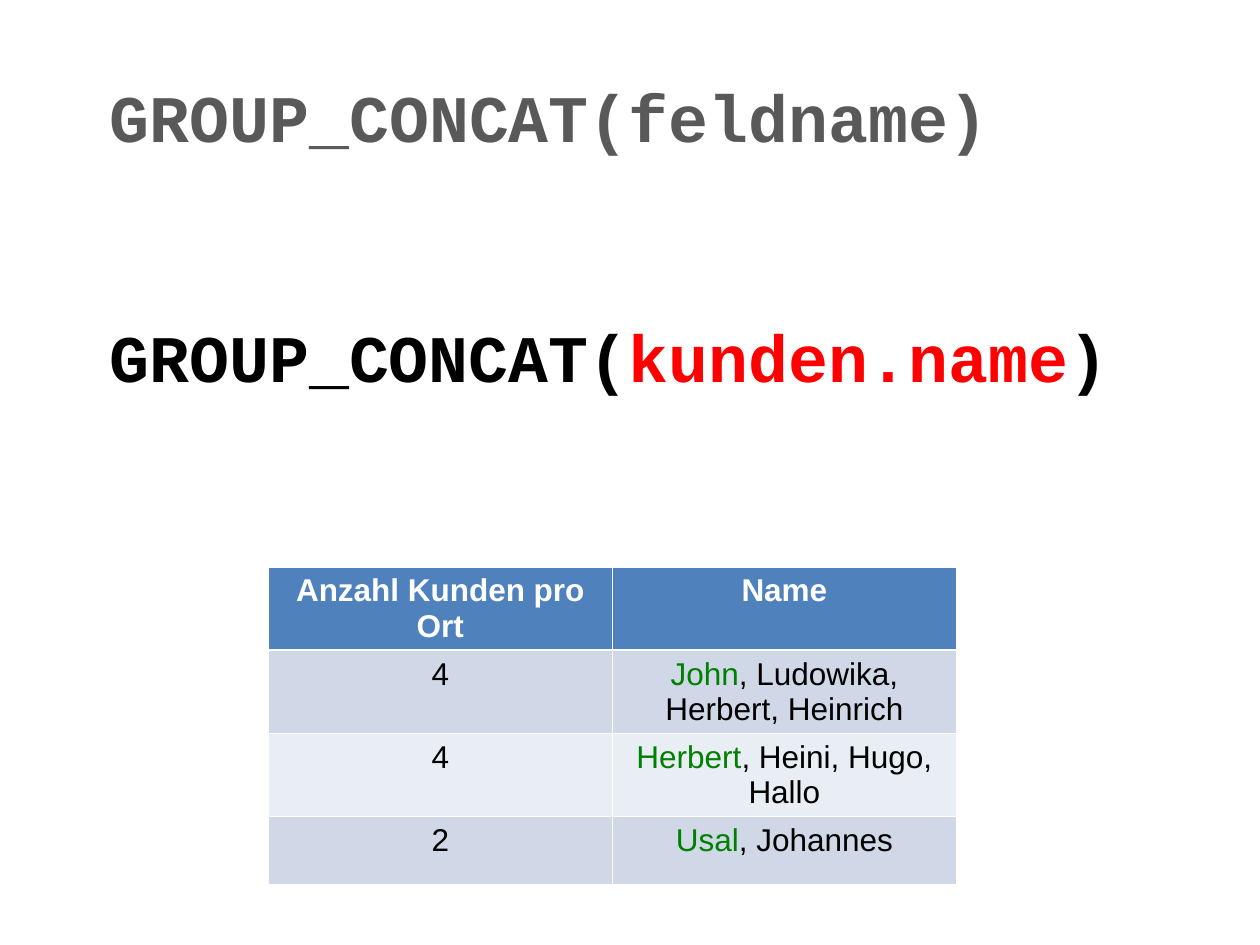
"""Build a slide that explains GROUP_CONCAT with a sample result table."""
from typing import NamedTuple

from pptx import Presentation
from pptx.dml.color import RGBColor as RGB
from pptx.enum.text import MSO_ANCHOR as Anchor, MSO_AUTO_SIZE as AutoSize, PP_ALIGN as Align
from pptx.util import Cm, Pt

COLORS = {
    "title": "595959",
    "text": "000000",
    "field": "FF0000",
    "first": "008000",
    "head_text": "FFFFFF",
    "head": "4F81BD",
    "odd": "D0D8E8",
    "even": "E9EDF4",
}


class Part(NamedTuple):
    text: str
    color: str = "text"


class Town(NamedTuple):
    count: str
    first: str
    others: str


TOWNS = [
    Town("4", "John", ", Ludowika, Herbert, Heinrich"),
    Town("4", "Herbert", ", Heini, Hugo, Hallo"),
    Town("2", "Usal", ", Johannes"),
]


def write(p, parts: list[Part], font: str, size: int, bold: bool) -> None:
    """Add coloured runs to a paragraph."""
    for part in parts:
        r = p.add_run()
        r.text = part.text
        r.font.name = font
        r.font.size = Pt(size)
        r.font.bold = bold
        r.font.color.rgb = RGB.from_string(COLORS[part.color])


def write_code(sp, top: float, parts: list[Part]) -> None:
    """Place a shape as a full-width line of code."""
    sp.left, sp.top, sp.width, sp.height = Cm(1.96), Cm(top), Cm(22), Cm(1.88)
    tf = sp.text_frame
    tf.word_wrap = True
    tf.auto_size = AutoSize.NONE
    tf.vertical_anchor = Anchor.TOP
    p = tf.paragraphs[0]
    p.alignment = Align.LEFT
    p.space_before = Pt(8)
    write(p, parts, "Courier New", 38, True)


def fill_cell(cell, parts: list[Part], fill: str, bold: bool = False) -> None:
    """Fill one table cell with centred text."""
    cell.fill.solid()
    cell.fill.fore_color.rgb = RGB.from_string(COLORS[fill])
    p = cell.text_frame.paragraphs[0]
    p.alignment = Align.CENTER
    write(p, parts, "Arial", 18, bold)


def add_towns(s, towns: list[Town]) -> None:
    """Add the table of customers per town."""
    n = len(towns) + 1
    table = s.shapes.add_table(n, 2, Cm(5.41), Cm(11.43), Cm(13.87), Cm(1.37 * n)).table
    for cell, label in zip(table.rows[0].cells, ("Anzahl Kunden pro Ort", "Name")):
        fill_cell(cell, [Part(label, "head_text")], "head", True)
    for i, town in enumerate(towns, start=1):
        fill = "odd" if i % 2 else "even"
        fill_cell(table.cell(i, 0), [Part(town.count)], fill)
        fill_cell(table.cell(i, 1), [Part(town.first, "first"), Part(town.others)], fill)


def main() -> None:
    """Create and save the presentation."""
    prs = Presentation()
    prs.slide_width, prs.slide_height = Cm(25.4), Cm(19.05)
    s = prs.slides.add_slide(prs.slide_layouts[5])
    write_code(s.shapes.title, 1.4, [Part("GROUP_CONCAT(feldname)", "title")])
    example = s.shapes.add_textbox(0, 0, 0, 0)
    write_code(example, 6.25, [Part("GROUP_CONCAT("), Part("kunden.name", "field"), Part(")")])
    add_towns(s, TOWNS)
    prs.save("out.pptx")


if __name__ == "__main__":
    main()
